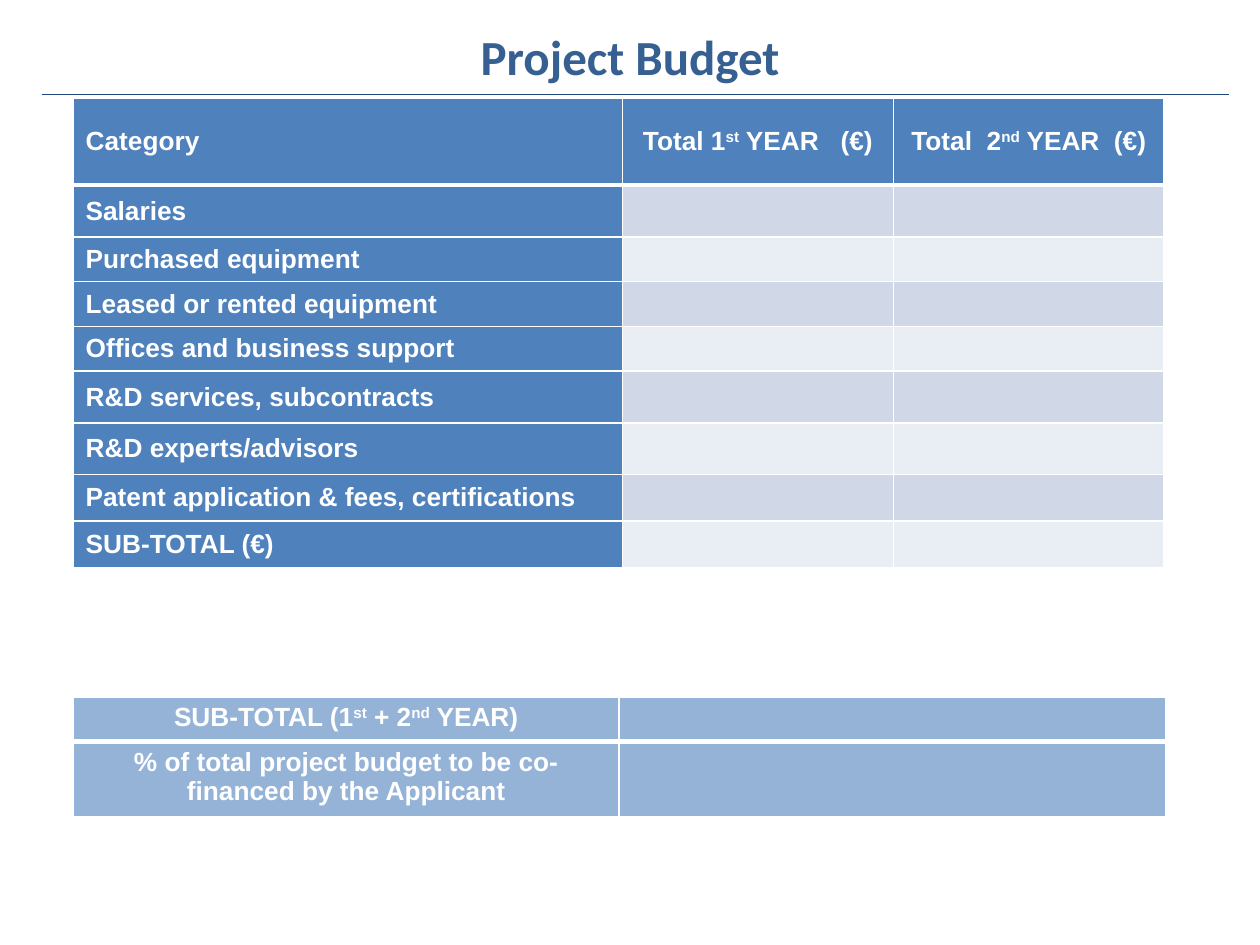
from lxml import etree
from pptx import Presentation
from pptx.dml.color import RGBColor
from pptx.enum import shapes, text
from pptx.oxml import ns
from pptx.util import Inches, Pt

WHITE, BLUE, PALE_BLUE = "FFFFFF", "4F81BD", "95B3D7"
BANDS = ["D0D8E8", "E9EDF4"]


def rgb(color):
    return RGBColor.from_string(color)


def format_cell(cell, content, fill, align, anchor, top=1, bottom=1):
    """Write content (parts between ^ marks are superscript), borders and fill."""
    cell.vertical_anchor = anchor
    paragraph = cell.text_frame.paragraphs[0]
    paragraph.alignment = align
    for i, part in enumerate(content.split("^") if content else []):
        run = paragraph.add_run()
        run.text = part
        run.font.name, run.font.size, run.font.bold = "Arial", Pt(15), True
        run.font.color.rgb = rgb(WHITE)
        if i % 2:
            run._r.get_or_add_rPr().set("baseline", "30000")
    if not content:
        etree.SubElement(paragraph._p, ns.qn("a:endParaRPr"), sz="1500")
    properties = cell._tc.get_or_add_tcPr()
    for side, width in zip("LRTB", (1, 1, top, bottom)):
        border = etree.SubElement(properties, ns.qn(f"a:ln{side}"), w=str(Pt(width)))
        solid = etree.SubElement(border, ns.qn("a:solidFill"))
        etree.SubElement(solid, ns.qn("a:srgbClr"), val=WHITE)
    cell.fill.solid()
    cell.fill.fore_color.rgb = rgb(fill)


prs = Presentation()
prs.slide_width, prs.slide_height = Inches(10), Inches(7.5)
slide = prs.slides.add_slide(prs.slide_layouts[5])

# Title
title = slide.shapes.title
title.left, title.top = Inches(0.5), Inches(0.13)
title.width, title.height = Inches(9), Inches(0.62)
title.text_frame.vertical_anchor = text.MSO_ANCHOR.MIDDLE
heading = title.text_frame.paragraphs[0]
heading.alignment = text.PP_ALIGN.CENTER
run = heading.add_run()
run.text = "Project Budget"
run.font.name, run.font.size, run.font.bold = "Calibri", Pt(28), True
run.font.color.rgb = rgb("376092")

# Rule under the title
rule = slide.shapes.add_connector(
    shapes.MSO_CONNECTOR.STRAIGHT, Inches(0.33), Inches(0.75), Inches(9.75), Inches(0.75))
rule.line.color.rgb = rgb("1F497D")
rule.line.width = Pt(1)
etree.SubElement(rule._element.spPr, ns.qn("a:effectLst"))

# Yearly budget by category
headers = ["Category", "Total 1^st^ YEAR   (€)", "Total  2^nd^ YEAR  (€)"]
categories = [
    ("Salaries", 0.41),
    ("Purchased equipment", 0.35),
    ("Leased or rented equipment", 0.35),
    ("Offices and business support", 0.35),
    ("R&D services, subcontracts", 0.41),
    ("R&D experts/advisors", 0.41),
    ("Patent application & fees, certifications", 0.37),
    ("SUB-TOTAL (€)", 0.37),
]
budget = slide.shapes.add_table(
    len(categories) + 1, 3, Inches(0.58), Inches(0.78), Inches(8.66), Inches(3.7)).table
for column, width in zip(budget.columns, (4.36, 2.15, 2.15)):
    column.width = Inches(width)
budget.rows[0].height = Inches(0.69)
for c, header in enumerate(headers):
    align = text.PP_ALIGN.CENTER if c else text.PP_ALIGN.LEFT
    format_cell(budget.cell(0, c), header, BLUE, align, text.MSO_ANCHOR.MIDDLE, bottom=3)
for r, (category, height) in enumerate(categories, 1):
    budget.rows[r].height = Inches(height)
    for c in range(3):
        format_cell(budget.cell(r, c), "" if c else category,
                    BANDS[(r - 1) % 2] if c else BLUE, text.PP_ALIGN.LEFT,
                    text.MSO_ANCHOR.MIDDLE, top=3 if r == 1 else 1)

# Two-year totals
totals = [
    ("SUB-TOTAL (1^st^ + 2^nd^ YEAR)", 0.35, 1, 3),
    ("% of total project budget to be co-financed by the Applicant", 0.6, 3, 1),
]
summary = slide.shapes.add_table(
    2, 2, Inches(0.58), Inches(5.53), Inches(8.67), Inches(0.95)).table
for r, (label, height, top, bottom) in enumerate(totals):
    summary.rows[r].height = Inches(height)
    for c in range(2):
        format_cell(summary.cell(r, c), "" if c else label, PALE_BLUE,
                    text.PP_ALIGN.CENTER, text.MSO_ANCHOR.TOP, top, bottom)

prs.save("out.pptx")
